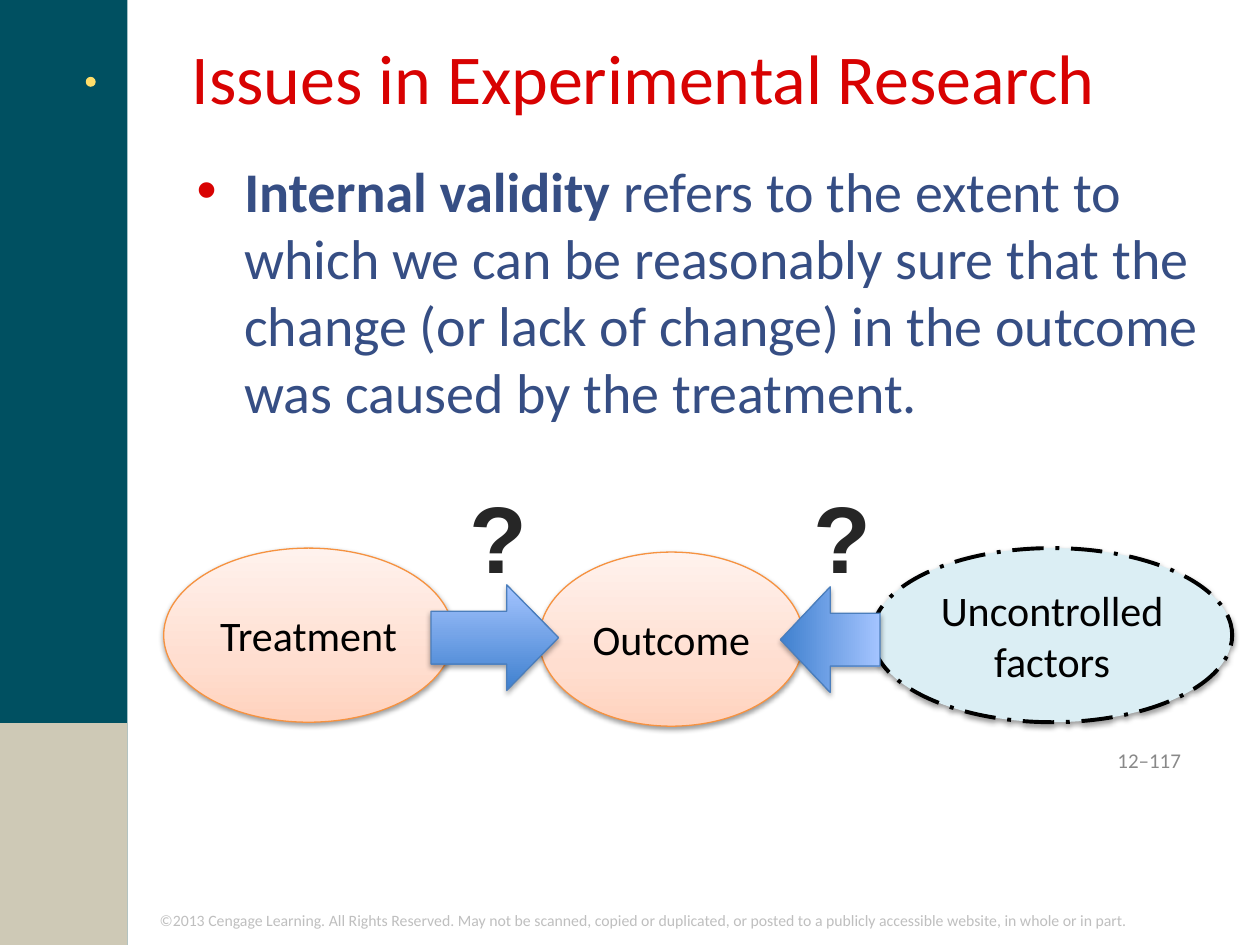
"""Builds a slide on internal validity in experimental research."""
from copy import deepcopy
from dataclasses import dataclass
from typing import Optional

from lxml.etree import SubElement
from pptx import Presentation
from pptx.dml.color import RGBColor
from pptx.enum.dml import MSO_LINE_DASH_STYLE as Dash
from pptx.enum.shapes import MSO_AUTO_SHAPE_TYPE as Preset
from pptx.enum.text import MSO_ANCHOR as Anchor, MSO_AUTO_SIZE as AutoSize, PP_ALIGN as Align
from pptx.oxml.ns import qn
from pptx.util import Cm, Pt

PEACH = ((0, "FFD2BD"), (35, "FFDED0"), (100, "FFF2ED"))
BLUE = ((0, "3F80CE"), (100, "A4C4FF"))
RED = "D80202"


@dataclass(frozen=True)
class Box:
    left: float
    top: float
    width: float
    height: float

    def lengths(self) -> tuple:
        return Cm(self.left), Cm(self.top), Cm(self.width), Cm(self.height)


@dataclass(frozen=True)
class Figure:
    preset: Preset
    box: Box
    fill: object
    line: Optional[str] = None
    line_width: float = 0.75
    dash: Optional[Dash] = None
    shadow: Optional[tuple] = None
    label: str = ""
    rotation: int = 0
    head: Optional[float] = None


@dataclass(frozen=True)
class Caption:
    box: Box
    wording: str
    size: float
    color: str
    font: str = "Calibri"
    align: Align = Align.LEFT
    anchor: Anchor = Anchor.TOP
    bold: bool = False
    outline: Optional[str] = None


def rgb(value: str) -> RGBColor:
    return RGBColor.from_string(value)


def style(run, size: float, color: str, font: str = "Calibri", bold: bool = False) -> None:
    run.font.size, run.font.name, run.font.bold = Pt(size), font, bold
    run.font.color.rgb = rgb(color)


def add_color(parent, value: str):
    return SubElement(parent, qn("a:srgbClr"), val=value)


def paint_gradient(shape, stops: tuple) -> None:
    shape.fill.gradient()
    shape.fill.gradient_angle = 90
    stop_list = shape._element.spPr.find(".//" + qn("a:gsLst"))
    pattern = deepcopy(stop_list[0])
    for old in list(stop_list):
        stop_list.remove(old)
    for position, value in stops:
        stop = deepcopy(pattern)
        stop.set("pos", str(position * 1000))
        for old in list(stop):
            stop.remove(old)
        add_color(stop, value)
        stop_list.append(stop)


def cast_shadow(shape, opacity: int, distance: float) -> None:
    effects = shape._element.spPr.find(qn("a:effectLst"))
    shadow = SubElement(effects, qn("a:outerShdw"), blurRad=str(Pt(3.1)),
                        dist=str(Pt(distance)), dir="5400000", rotWithShape="0")
    SubElement(add_color(shadow, "000000"), qn("a:alpha"), val=str(opacity * 1000))


def draw_figure(slide, figure: Figure) -> None:
    shape = slide.shapes.add_shape(figure.preset, *figure.box.lengths())
    shape.shadow.inherit = False
    shape.rotation = figure.rotation
    if figure.head is not None:
        shape.adjustments[1] = figure.head
    if isinstance(figure.fill, str):
        shape.fill.solid()
        shape.fill.fore_color.rgb = rgb(figure.fill)
    else:
        paint_gradient(shape, figure.fill)
    if figure.line:
        shape.line.color.rgb = rgb(figure.line)
        shape.line.width = Pt(figure.line_width)
        if figure.dash:
            shape.line.dash_style = figure.dash
    else:
        shape.line.fill.background()
    if figure.shadow:
        cast_shadow(shape, *figure.shadow)
    if figure.label:
        frame = shape.text_frame
        frame.text, frame.vertical_anchor = figure.label, Anchor.MIDDLE
        frame.paragraphs[0].alignment = Align.CENTER
        style(frame.paragraphs[0].runs[0], 24, "000000")


def draw_caption(slide, caption: Caption) -> None:
    frame = slide.shapes.add_textbox(*caption.box.lengths()).text_frame
    frame.word_wrap = True
    frame.text, frame.vertical_anchor = caption.wording, caption.anchor
    frame.paragraphs[0].alignment = caption.align
    run = frame.paragraphs[0].runs[0]
    style(run, caption.size, caption.color, caption.font, caption.bold)
    if caption.outline:
        properties = run.font._element
        edge = SubElement(properties, qn("a:ln"), w=str(Pt(1.06)))
        add_color(SubElement(edge, qn("a:solidFill")), caption.outline)
        properties.insert(0, edge)


def place(placeholder, box: Box):
    placeholder.left, placeholder.top, placeholder.width, placeholder.height = box.lengths()
    frame = placeholder.text_frame
    frame.auto_size, frame.vertical_anchor = AutoSize.NONE, Anchor.TOP
    return frame


def write_title(slide) -> None:
    frame = place(slide.shapes.title, Box(3.61, 0.56, 21.56, 2.44))
    frame.text = "Issues in Experimental Research"
    frame.paragraphs[0].alignment = Align.LEFT
    style(frame.paragraphs[0].runs[0], 40, RED)


def write_definition(slide) -> None:
    definition = place(slide.placeholders[1], Box(3.71, 3.02, 21.56, 15.04)).paragraphs[0]
    definition.space_before = Pt(0)
    properties = definition._p.get_or_add_pPr()
    properties.set("marL", str(Cm(0.96)))
    properties.set("indent", str(-Cm(0.96)))
    add_color(SubElement(properties, qn("a:buClr")), RED)
    SubElement(properties, qn("a:buSzPct"), val="102000")
    SubElement(properties, qn("a:buFont"), typeface="Arial")
    SubElement(properties, qn("a:buChar"), char="•")
    for wording, bold in (
        ("Internal validity", True),
        (" refers to the extent to which we can be reasonably sure that the change "
         "(or lack of change) in the outcome was caused by the treatment.", False),
    ):
        run = definition.add_run()
        run.text = wording
        style(run, 32, "364E84", bold=bold)


SIDEBAR = (
    Figure(Preset.RECTANGLE, Box(0, 0, 2.57, 19.05), "005061"),
    Figure(Preset.RECTANGLE, Box(0, 14.58, 2.57, 4.47), "CEC9B6"),
    Figure(Preset.OVAL, Box(1.73, 1.55, 0.2, 0.2), "FFDE6A"),
)
DIAGRAM = (
    Figure(Preset.OVAL, Box(10.87, 11.13, 5.33, 3.51), PEACH, "F69240",
           shadow=(38, 1.6), label="Outcome"),
    Figure(Preset.OVAL, Box(3.3, 11.05, 5.84, 3.51), PEACH, "F69240",
           shadow=(38, 1.6), label="Treatment"),
    Figure(Preset.RIGHT_ARROW, Box(8.69, 11.79, 2.57, 2.13), BLUE, "4B7EBC",
           shadow=(35, 1.8), head=0.49),
    Figure(Preset.OVAL, Box(17.58, 11.05, 7.26, 3.51), "DBEEF4", "000000", 2.25,
           Dash.LONG_DASH_DOT, (38, 1.6), "Uncontrolled factors"),
    Figure(Preset.DOWN_ARROW, Box(15.67, 11.89, 2.13, 2.01), BLUE, "4B7EBC",
           shadow=(35, 1.8), rotation=90),
)
CAPTIONS = (
    Caption(Box(2.97, 18.24, 22.43, 0.64),
            "©2013 Cengage Learning. All Rights Reserved. May not be scanned, copied or duplicated, "
            "or posted to a publicly accessible website, in whole or in part.", 9, "BFBFBF"),
    Caption(Box(18.14, 14.81, 5.92, 1.02), "12–117", 12, "898989",
            align=Align.RIGHT, anchor=Anchor.MIDDLE),
    *(Caption(Box(left, 9.53, 1.4, 2.57), "?", 54, "262626", "Arial", Align.CENTER,
              bold=True, outline="FFFFFF") for left in (16.15, 9.22)),
)


def main() -> None:
    deck = Presentation()
    deck.slide_width, deck.slide_height = Cm(25.4), Cm(19.05)
    slide = deck.slides.add_slide(deck.slide_layouts[1])
    write_title(slide)
    write_definition(slide)
    for figure in SIDEBAR + DIAGRAM:
        draw_figure(slide, figure)
    for caption in CAPTIONS:
        draw_caption(slide, caption)
    deck.save("out.pptx")


if __name__ == "__main__":
    main()
